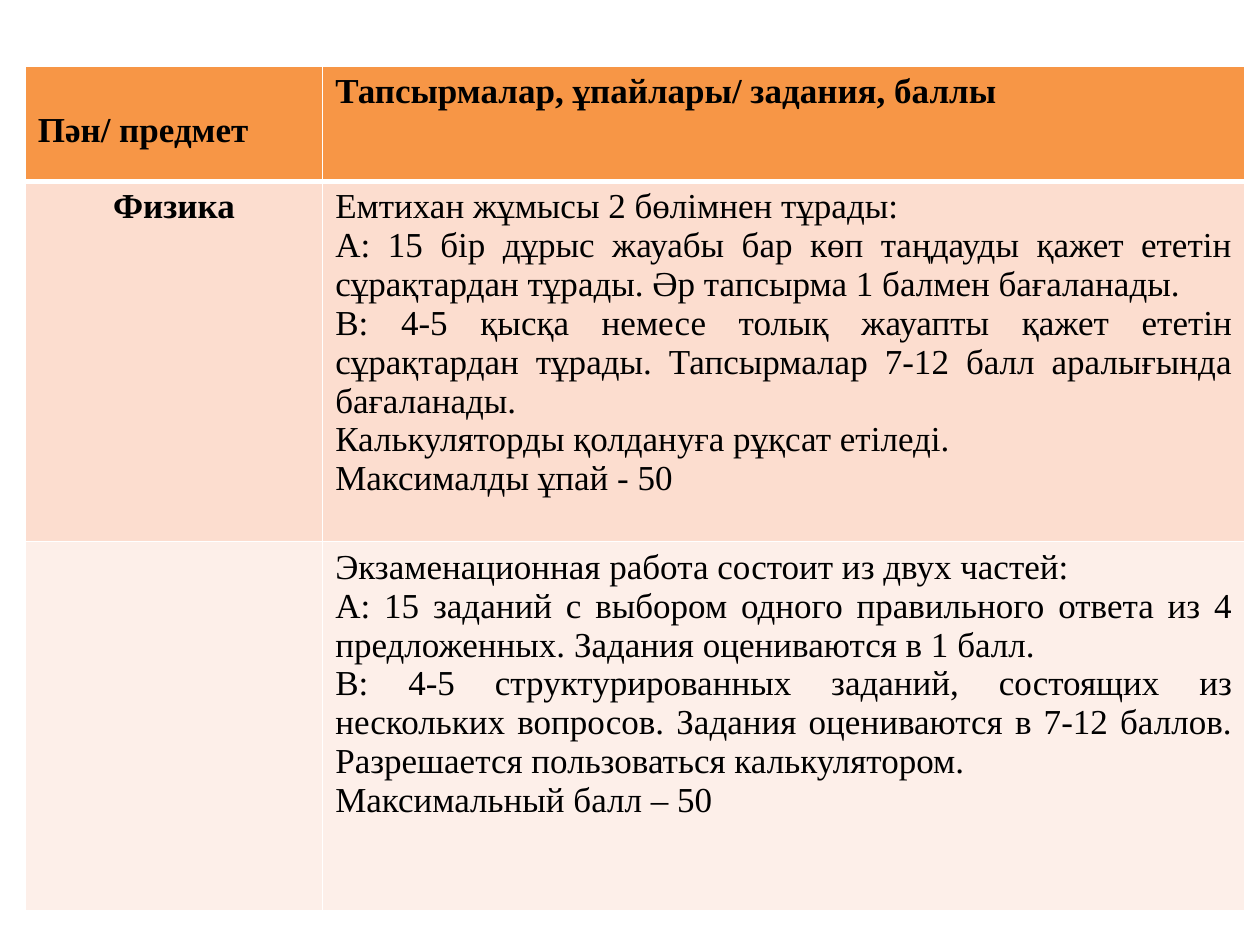
from lxml import etree
from pptx import Presentation
from pptx import util as u
from pptx.dml.color import RGBColor
from pptx.enum import text
from pptx.oxml.ns import qn

Pt = u.Pt
THEME = {
    "font": "Times New Roman",
    "size": 20,
    "ink": "000000",
    "border": "FFFFFF",
    "rows": ["F79646", "FCDDCF", "FDEFE9"],
}
COLUMN_WIDTHS = [170, 527]
ROW_HEIGHTS = [66, 206, 211]
THIN, THICK = 1, 3
SUBJECT_TOP_MARGIN = 25.75

ROWS = [
    [["Пән/ предмет"], ["Тапсырмалар, ұпайлары/ задания, баллы"]],
    [["Физика"], [
        "Емтихан жұмысы 2 бөлімнен тұрады:",
        "А: 15 бір дұрыс жауабы бар көп таңдауды қажет ететін сұрақтардан "
        "тұрады. Әр тапсырма 1 балмен бағаланады.",
        "В: 4-5 қысқа немесе толық жауапты қажет ететін сұрақтардан тұрады. "
        "Тапсырмалар 7-12 балл аралығында бағаланады.",
        "Калькуляторды қолдануға рұқсат етіледі.",
        "Максималды ұпай - 50",
    ]],
    [[], [
        "Экзаменационная работа состоит из двух частей:",
        "А: 15 заданий с выбором одного правильного ответа из 4 предложенных. "
        "Задания оцениваются в 1 балл.",
        "В: 4-5 структурированных заданий, состоящих из нескольких вопросов. "
        "Задания оцениваются в 7-12 баллов. Разрешается пользоваться "
        "калькулятором.",
        "Максимальный балл – 50",
    ]],
]


def add_borders(cell, widths):
    """Add cell borders; must run before the cell gets its fill."""
    tc_pr = cell._tc.get_or_add_tcPr()
    for side, width in widths.items():
        ln = etree.SubElement(tc_pr, qn(f"a:ln{side}"), w=str(Pt(width)))
        fill = etree.SubElement(ln, qn("a:solidFill"))
        etree.SubElement(fill, qn("a:srgbClr"), val=THEME["border"])


prs = Presentation()
prs.slide_width, prs.slide_height = Pt(720), Pt(540)
s = prs.slides.add_slide(prs.slide_layouts[6])

table = s.shapes.add_table(
    len(ROW_HEIGHTS), len(COLUMN_WIDTHS), Pt(14.4), Pt(37.6),
    Pt(sum(COLUMN_WIDTHS)), Pt(sum(ROW_HEIGHTS))).table
for column, width in zip(table.columns, COLUMN_WIDTHS):
    column.width = Pt(width)
for row, height in zip(table.rows, ROW_HEIGHTS):
    row.height = Pt(height)

for i, row in enumerate(ROWS):
    for j, paragraphs in enumerate(row):
        cell = table.cell(i, j)
        add_borders(cell, {"L": THIN, "R": THIN,
                           "T": THICK if i == 1 else THIN,
                           "B": THICK if i == 0 else THIN})
        cell.fill.solid()
        cell.fill.fore_color.rgb = RGBColor.from_string(THEME["rows"][i])
        font = {"name": THEME["font"], "size": Pt(THEME["size"]),
                "bold": i == 0 or j == 0}
        tf = cell.text_frame
        for n, line in enumerate(paragraphs):
            p = tf.add_paragraph() if n else tf.paragraphs[0]
            p.alignment = text.PP_ALIGN.JUSTIFY
            r = p.add_run()
            r.text = line
            for name, value in font.items():
                setattr(r.font, name, value)
            r.font.color.rgb = RGBColor.from_string(THEME["ink"])

table.cell(0, 0).margin_top = Pt(SUBJECT_TOP_MARGIN)
table.cell(1, 0).text_frame.paragraphs[0].alignment = text.PP_ALIGN.CENTER

prs.save("out.pptx")
